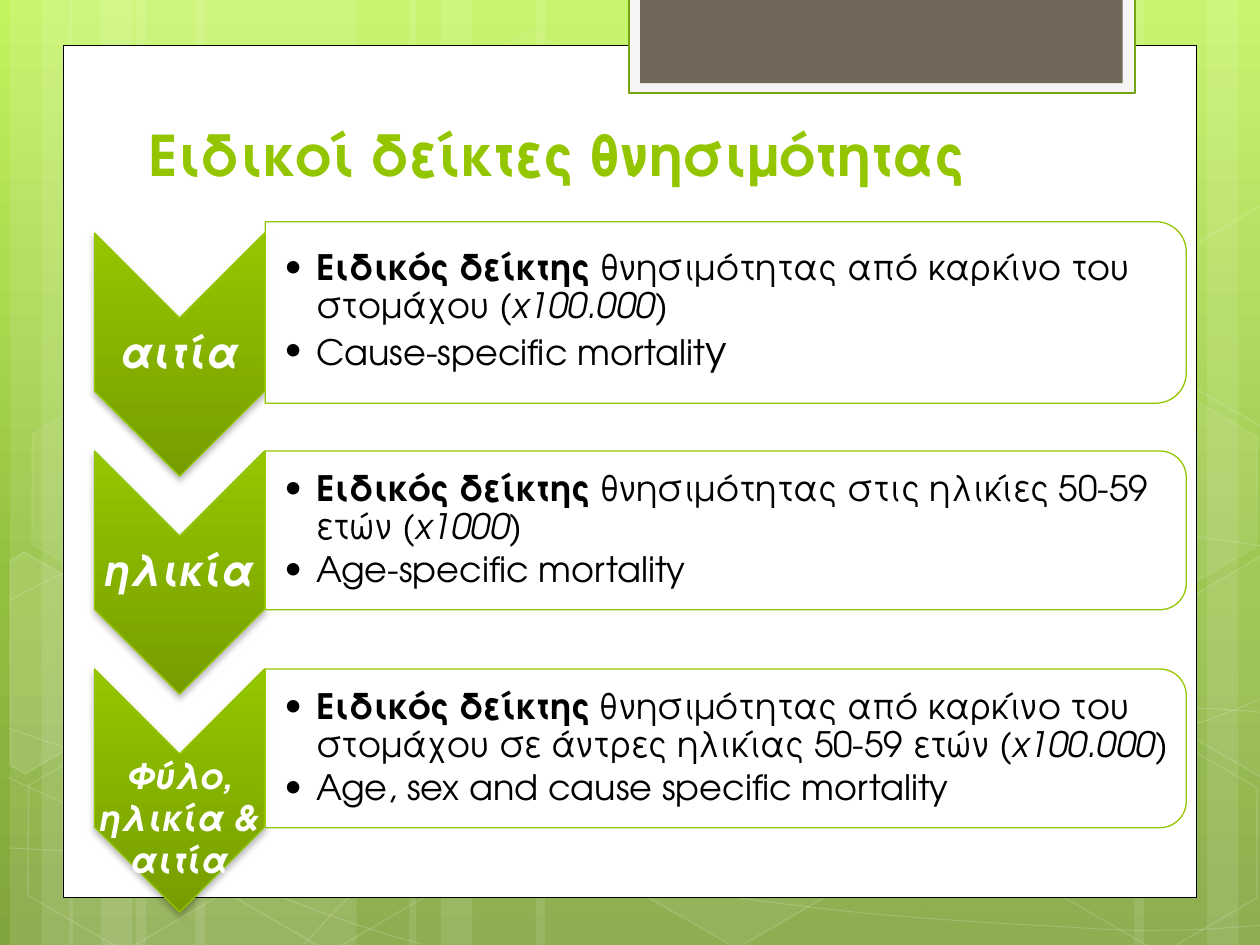
import math
from dataclasses import dataclass

import pptx
import pptx.dml.color
import pptx.dml.fill
import pptx.enum.shapes
import pptx.enum.text
import pptx.oxml.ns
import pptx.shapes.autoshape
import pptx.slide
import pptx.util
from lxml import etree

Inches = pptx.util.Inches
Pt = pptx.util.Pt
Kind = pptx.enum.shapes.MSO_SHAPE
Align = pptx.enum.text.PP_ALIGN
Anchor = pptx.enum.text.MSO_ANCHOR
qn = pptx.oxml.ns.qn
Slide = pptx.slide.Slide
Shape = pptx.shapes.autoshape.Shape
Box = tuple[float, float, float, float]
Point = tuple[float, float]

FONT = "TeX Gyre Adventor"
GREEN = "94C600"
WHITE = "FFFFFF"


@dataclass
class Run:
    words: str
    bold: bool = False
    slant: bool = False
    size: float | None = None


@dataclass
class Wave:
    start: Point
    bends: list[tuple[float, ...]]


@dataclass
class Hex:
    left: float
    top: float
    fill: int
    line: int


@dataclass
class Shard:
    mid: Point
    points: list[Point]
    fill: int


@dataclass
class Row:
    label: str
    size: float
    high: float
    lines: list[list[Run]]
    drop: float = 0.02


STRIPES = [(1.08, 1.75), (0.08, 0.5), (0.33, 0.83), (1.55, 1.75), (0.55, 0.5), (0.8, 0.83),
           (7.33, 1.75), (9.58, 0.5), (9, 0.83), (4.25, 3.08), (3.25, 0.5), (3.5, 0.83)]
WAVES = [
    Wave((0.07, 6.73), [(0.61, 6.76, 1.15, 6.79, 1.9, 6.78), (2.65, 6.77, 3.58, 6.75, 4.58, 6.65),
                        (5.58, 6.55, 7, 6.36, 7.92, 6.17), (8.83, 5.98, 9.77, 5.68, 10.07, 5.51)]),
    Wave((0.07, 4.77), [(0.36, 4.61, 0.65, 4.46, 1.21, 4.31), (1.78, 4.16, 2.59, 3.94, 3.47, 3.87),
                        (4.36, 3.8, 5.44, 3.79, 6.54, 3.87), (7.64, 3.95, 9.47, 4.26, 10.07, 4.34)]),
    Wave((0.06, 6.17), [(1.27, 6.72, 2.47, 7.27, 3.34, 7.49)]),
    Wave((0.07, 5.78), [(0.38, 5.89, 0.7, 6, 1.28, 6.16), (1.86, 6.31, 2.73, 6.56, 3.57, 6.73),
                        (4.4, 6.9, 5.45, 7.08, 6.28, 7.18), (7.11, 7.29, 8, 7.33, 8.53, 7.36),
                        (9.05, 7.4, 9.19, 7.38, 9.45, 7.38), (9.71, 7.37, 9.89, 7.35, 10.07, 7.34)]),
    Wave((2.42, 7.49), [(2.6, 7.29, 2.78, 7.09, 3.02, 6.91), (3.26, 6.73, 3.6, 6.53, 3.88, 6.39),
                        (4.16, 6.25, 4.33, 6.19, 4.7, 6.09), (5.06, 5.99, 5.73, 5.85, 6.08, 5.78),
                        (6.44, 5.71, 6.49, 5.71, 6.8, 5.69), (7.11, 5.66, 7.6, 5.63, 7.94, 5.62),
                        (8.29, 5.61, 8.86, 5.62, 8.86, 5.62), (9.53, 5.62),
                        (9.71, 5.63, 9.88, 5.64, 9.97, 5.65), (10.06, 5.66, 10.03, 5.65, 10.06, 5.66)]),
]
CELLS = [Hex(3.34, 0.36, 4, 8), Hex(4.97, 5.89, 6, 12), Hex(0.11, 5.91, 0, 12),
         Hex(0.14, 3.12, 7, 8), Hex(1.74, 5.92, 0, 12), Hex(7.53, 4.53, 10, 12),
         Hex(8.34, 5.93, 0, 12), Hex(8.34, 3.14, 7, 8)]
SHARDS = [
    Shard((0.36, 5.35), [(0.08, 4.45), (0.19, 4.38), (0.96, 4.82), (0.95, 5.7), (0.2, 6.14), (0.08, 6.07)], 10),
    Shard((9.85, 5.2), [(9.26, 4.85), (10.01, 4.41), (10.09, 4.46), (10.09, 6.13), (10.02, 6.17), (9.26, 5.73)], 4),
    Shard((9.85, 2.41), [(9.26, 2.07), (10.01, 1.63), (10.1, 1.68), (10.09, 3.35), (10.02, 3.39), (9.26, 2.95)], 0),
]
ROWS = [
    Row("αιτία", 24, 1.44, [
        [Run("Ειδικός δείκτης ", True), Run("θνησιμότητας από καρκίνο του στομάχου "), Run("(x100.000)", slant=True)],
        [Run("Cause-specific mortalit"), Run("y", size=23)]]),
    Row("ηλικία", 24, 1.26, [
        [Run("Ειδικός δείκτης ", True), Run("θνησιμότητας στις ηλικίες 50-59 ετών "), Run("(x1000)", slant=True)],
        [Run("Age-specific mortality")]]),
    Row("Φύλο, ηλικία & αιτία", 20, 1.26, [
        [Run("Ειδικός δείκτης", True),
         Run(" θνησιμότητας από καρκίνο του στομάχου σε άντρες ηλικίας 50-59 ετών "), Run("(x100.000)", slant=True)],
        [Run("Age, sex and cause specific mortality")]], drop=0.44),
]


def paint(fill: pptx.dml.fill.FillFormat, shade: str) -> None:
    fill.solid()
    fill.fore_color.rgb = pptx.dml.color.RGBColor.from_string(shade)


def fade(part: etree._Element, amount: int) -> None:
    etree.SubElement(part, qn("a:alpha"), val=str(amount * 1000))


def blend(owner: etree._Element, stops: list[tuple[int, str]]) -> None:
    grad = next(owner.iter(qn("a:gradFill")))
    grad.set("rotWithShape", "0")
    grad.find(qn("a:lin")).set("ang", "5400000")
    shades = grad.find(qn("a:gsLst"))
    shades[:] = []
    for spot, shade in stops:
        stop = etree.SubElement(shades, qn("a:gs"), pos=str(spot * 1000))
        etree.SubElement(stop, qn("a:srgbClr"), val=shade)


def style(shape: Shape, fill: str | None = None, clear: int = 100, line: str | None = None,
          width: float = 1, faint: int = 100, turn: float = 0) -> Shape:
    shape.shadow.inherit = False
    shape.rotation = turn
    props = shape.element.spPr
    if fill and clear:
        paint(shape.fill, fill)
        if clear < 100:
            fade(props.find(qn("a:solidFill"))[0], clear)
    else:
        shape.fill.background()
    if line:
        paint(shape.line.fill, line)
        shape.line.width = Pt(width)
        if faint < 100:
            fade(props.find(qn("a:ln")).find(qn("a:solidFill"))[0], faint)
    else:
        shape.line.fill.background()
    return shape


def block(slide: Slide, kind: Kind, at: Box, **look) -> Shape:
    return style(slide.shapes.add_shape(kind, *map(Inches, at)), **look)


def trace(slide: Slide, points: list[Point], close: bool, **look) -> Shape:
    first, *rest = [(Inches(x), Inches(y)) for x, y in points]
    pen = slide.shapes.build_freeform(*first, scale=1.0)
    pen.add_line_segments(rest, close=close)
    return style(pen.convert_to_shape(), **look)


def curve(slide: Slide, wave: Wave, **look) -> None:
    points = [wave.start] + [pair for bend in wave.bends for pair in zip(bend[::2], bend[1::2])]
    shape = trace(slide, points, False, **look)
    legs = iter(list(shape.element.iter(qn("a:lnTo"))))
    for bend in wave.bends:
        leg = next(legs)
        if len(bend) == 6:
            leg.addprevious(arc := etree.Element(qn("a:cubicBezTo")))
            for part in (leg, next(legs), next(legs)):
                arc.append(part[0])
                part.getparent().remove(part)


def swing(point: Point, mid: Point, turn: float) -> Point:
    x, y = point[0] - mid[0], point[1] - mid[1]
    cos, sin = math.cos(math.radians(turn)), math.sin(math.radians(turn))
    return mid[0] + x * cos + y * sin, mid[1] - x * sin + y * cos


def text(slide: Slide, at: Box, lines: list[list[Run]], size: float = 20, shade: str = "000000",
         align: Align = Align.LEFT, anchor: Anchor = Anchor.MIDDLE, pad: Box = (0.1, 0.05, 0.1, 0.05),
         space: float = 1, after: float = 0, dots: bool = False) -> None:
    frame = slide.shapes.add_textbox(*map(Inches, at)).text_frame
    frame.word_wrap = True
    frame.vertical_anchor = anchor
    frame.margin_left, frame.margin_top, frame.margin_right, frame.margin_bottom = map(Inches, pad)
    for i, runs in enumerate(lines):
        para = frame.add_paragraph() if i else frame.paragraphs[0]
        if dots:
            props = para._p.get_or_add_pPr()
            props.set("marL", str(Inches(0.25)))
            props.set("indent", str(Inches(-0.25)))
            etree.SubElement(props, qn("a:buFont"), typeface=FONT)
            etree.SubElement(props, qn("a:buChar"), char="•")
            para.level = 1
        para.alignment = align
        para.line_spacing = space
        para.space_after = Pt(after)
        for item in runs:
            run = para.add_run()
            run.text = item.words
            font = run.font
            font.name, font.size = FONT, Pt(item.size or size)
            font.bold, font.italic = item.bold, item.slant
            paint(font.fill, shade)


def draw_row(slide: Slide, row: Row, mid: float) -> None:
    arrow = block(slide, Kind.CHEVRON, (0.46, mid - 0.34, 1.93, 1.35), fill=GREEN, line=GREEN, width=0.75, turn=90)
    arrow.fill.gradient()
    blend(arrow.element, [(0, GREEN), (100, "769D00")])
    glow = etree.SubElement(arrow.element.spPr.find(qn("a:effectLst")), qn("a:outerShdw"), blurRad=str(Pt(4)),
                            dist=str(Pt(2)), dir="5400000", rotWithShape="0")
    fade(etree.SubElement(glow, qn("a:srgbClr"), val="000000"), 28)
    text(slide, (0.75, mid + 0.05, 1.35, 0.58), [[Run(row.label, True, True)]], size=row.size, shade=WHITE,
         align=Align.CENTER, pad=(0.02, row.drop, 0.02, 0.02), space=0.9 if row.size > 20 else 1)
    block(slide, Kind.ROUND_2_SAME_RECTANGLE, (5.76 - row.high / 2, mid - 7.31 / 2, row.high, 7.31),
          fill=WHITE, clear=90, line=GREEN, width=0.75, turn=90)
    high = row.high - 0.13
    text(slide, (2.1, mid - high / 2, 7.25, high), row.lines, pad=(0.16, 0.01, 0.01, 0.01),
         space=0.9, after=3, dots=True)


def main() -> None:
    deck = pptx.Presentation()
    deck.slide_width, deck.slide_height = Inches(10), Inches(7.5)
    slide = deck.slides.add_slide(deck.slide_layouts[6])
    slide.background.fill.gradient()
    blend(slide.element, [(0, "C3F35F"), (62, "93BF3F"), (100, "81A53E")])
    for left, width in STRIPES:
        block(slide, Kind.RECTANGLE, (left, 0, width, 7.5), fill=WHITE, clear=10)
    for wave in WAVES:
        curve(slide, wave, line=WHITE, width=0.5, faint=20)
    for cell in CELLS:
        shape = block(slide, Kind.HEXAGON, (cell.left, cell.top, 1.75, 1.52), fill=WHITE, clear=cell.fill,
                      line=WHITE, faint=cell.line, turn=30)
        shape.adjustments[0] = 0.285
    for shard in SHARDS:
        points = [swing(point, shard.mid, 30) for point in shard.points]
        trace(slide, points, True, fill=WHITE, clear=shard.fill, line=WHITE, faint=12, turn=30)
    block(slide, Kind.RECTANGLE, (0.5, 0.36, 9, 6.76), fill=WHITE, line="000000", width=0.5)
    block(slide, Kind.RECTANGLE, (4.99, -0.02, 4.02, 0.76), fill="F5F5F5", line="74A510", width=1.25)
    block(slide, Kind.RECTANGLE, (5.08, -0.02, 3.83, 0.68), fill="71685A")
    text(slide, (1.08, 0.83, 7.68, 0.71), [[Run("Ειδικοί δείκτες θνησιμότητας", True)]],
         size=32, shade=GREEN, anchor=Anchor.BOTTOM)
    for i, row in enumerate(ROWS):
        draw_row(slide, row, 2.48 + 1.73 * i)
    deck.save("out.pptx")


if __name__ == "__main__":
    main()
